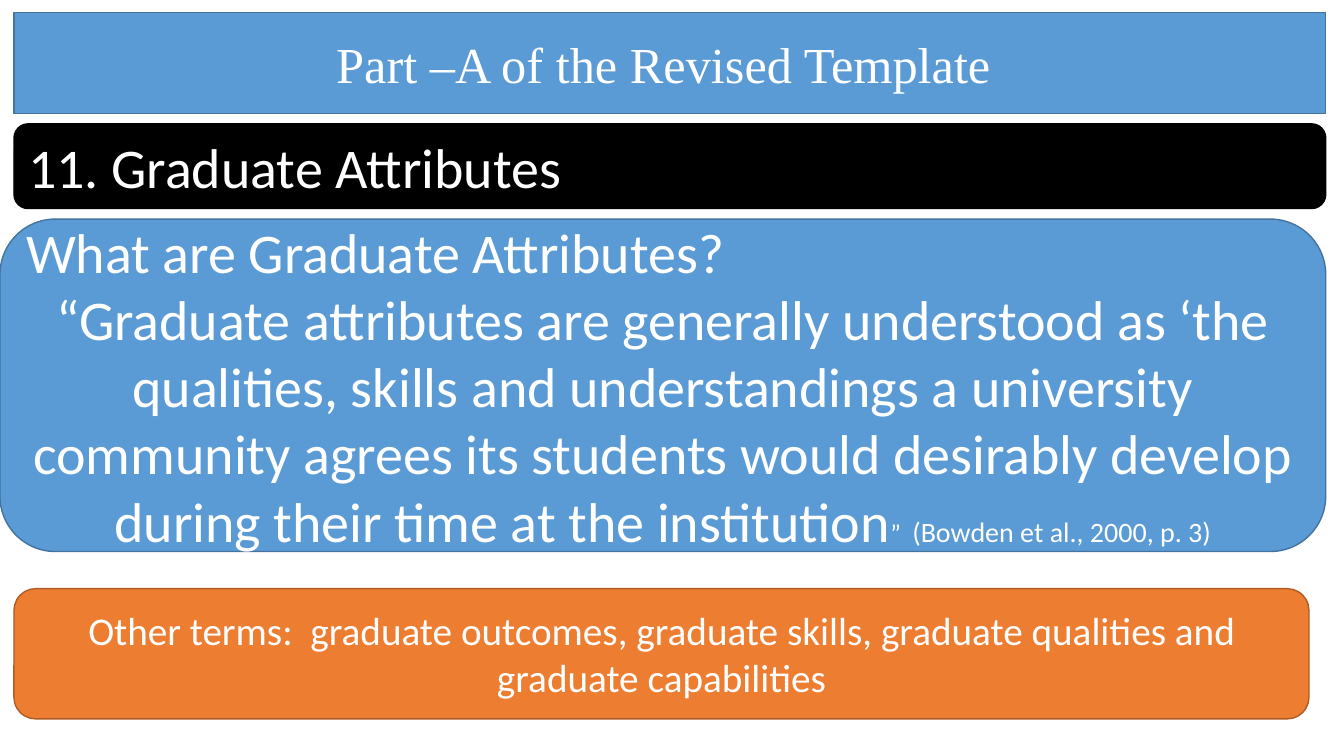
from copy import deepcopy

from pptx import Presentation
from pptx.dml.color import RGBColor
from pptx.enum.shapes import MSO_SHAPE
from pptx.enum.text import MSO_ANCHOR, MSO_AUTO_SIZE, PP_ALIGN
from pptx.util import Pt


def color(code):
    return RGBColor.from_string(code)


def style(box, fill, edge, lines):
    """Paint a box and write its lines, each an alignment and its runs."""
    box.fill.solid()
    box.fill.fore_color.rgb = color(fill)
    box.line.color.rgb = color(edge)
    box.line.width = Pt(1)
    frame = box.text_frame
    frame.word_wrap = True
    frame.auto_size = MSO_AUTO_SIZE.NONE
    frame.vertical_anchor = MSO_ANCHOR.MIDDLE
    frame.text = "\n".join("" for _ in lines)
    for para, (align, runs) in zip(frame.paragraphs, lines):
        para.alignment = align
        for text, size, face in runs:
            run = para.add_run()
            run.text = text
            run.font.size = Pt(size)
            run.font.name = face
            run.font.color.rgb = color("FFFFFF")


LEFT, MID = PP_ALIGN.LEFT, PP_ALIGN.CENTER
SANS, SERIF = "Calibri", "Times New Roman"
BLUE, NAVY = "5B9BD5", "43739E"

deck = Presentation()
deck.slide_width, deck.slide_height = Pt(960), Pt(540)
slide = deck.slides.add_slide(deck.slide_layouts[5])

# Bars below the title: place, fill, edge, lines
bars = [
    ((10, 88.5, 937, 60.5), "000000", "000000",
     [(LEFT, [("11. Graduate Attributes", 40, SANS)])]),
    ((0, 156.5, 947, 237.5), BLUE, NAVY,
     [(LEFT, [("What are Graduate Attributes?", 40, SANS)]),
      (MID, [("“Graduate attributes are generally understood as ‘the "
              "qualities, skills and understandings a university community "
              "agrees its students would desirably develop during their "
              "time at the institution", 40, SANS),
             ("”  ", 18, SANS),
             ("(Bowden et al., 2000, p. 3)", 20, SANS)])]),
    ((10, 420.5, 925, 93), "ED7D31", "AF5C24",
     [(MID, [("Other terms:  graduate outcomes, graduate skills, graduate "
              "qualities and graduate capabilities", 28, SANS)])]),
]
for place, fill, edge, lines in bars:
    bar = slide.shapes.add_shape(MSO_SHAPE.ROUNDED_RECTANGLE,
                                 *[Pt(v) for v in place])
    bar.shadow.inherit = False
    style(bar, fill, edge, lines)

# Title, given the rounded outline of the bars
title = slide.shapes.title
title.left, title.top, title.width, title.height = Pt(10), Pt(9), Pt(937), Pt(72)
outline = bar.element.spPr.find("{*}prstGeom")
title.element.spPr.insert(1, deepcopy(outline))
style(title, BLUE, NAVY,
      [(MID, [("Part –A of the Revised Template ", 36, SERIF)])])

deck.save("out.pptx")
